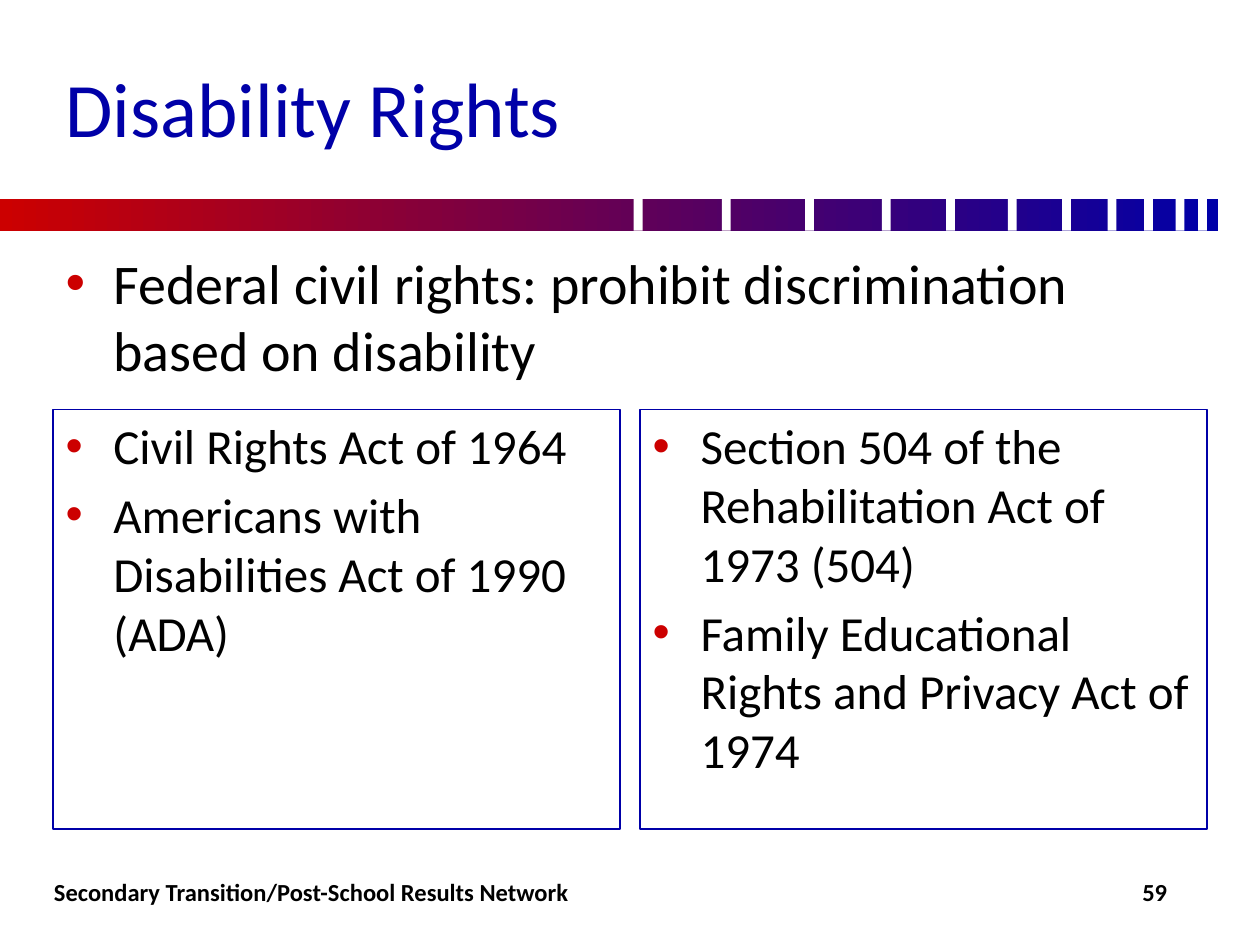
from lxml import etree
from pptx import Presentation
from pptx.dml.color import RGBColor
from pptx.enum.shapes import MSO_SHAPE
from pptx.enum.text import MSO_ANCHOR, MSO_AUTO_SIZE, PP_ALIGN
from pptx.oxml.ns import qn
from pptx.util import Inches, Pt

RED = RGBColor(0xCC, 0x00, 0x00)
BLUE = RGBColor(0x00, 0x00, 0xA8)
BLACK = RGBColor(0x00, 0x00, 0x00)
WHITE = RGBColor(0xFF, 0xFF, 0xFF)
FONT = "Calibri"
RECT = MSO_SHAPE.RECTANGLE
TOP, MIDDLE = MSO_ANCHOR.TOP, MSO_ANCHOR.MIDDLE
LEFT, CENTER = PP_ALIGN.LEFT, PP_ALIGN.CENTER
NO_FIT = MSO_AUTO_SIZE.NONE
COMPARISON_LAYOUT = 4
BAR_TOP, BAR_WIDTH, BAR_HEIGHT = 1.58, 9.67, 0.25
GAP_WIDTH = 0.07
GAP_LEFTS = (5.03, 5.73, 6.39, 7, 7.51, 8, 8.43, 8.79, 9.08, 9.33, 9.51)


def place(s, left, top, width, height):
    s.left, s.top = Inches(left), Inches(top)
    s.width, s.height = Inches(width), Inches(height)


def write(s, lines, size, color=BLACK, bold=False, anchor=TOP, align=LEFT):
    tf = s.text_frame
    tf.text = "\n".join(lines)
    tf.word_wrap = True
    tf.auto_size = NO_FIT
    tf.vertical_anchor = anchor
    for p in tf.paragraphs:
        p.alignment = align
        for r in p.runs:
            r.font.name = FONT
            r.font.size = Pt(size)
            r.font.bold = bold
            r.font.color.rgb = color


def add_bullet(p):
    pPr = p._p.get_or_add_pPr()
    pPr.set("marL", str(Inches(0.38)))
    pPr.set("indent", str(-Inches(0.38)))
    color = etree.SubElement(pPr, qn("a:buClr"))
    etree.SubElement(color, qn("a:srgbClr"), val=str(RED))
    etree.SubElement(pPr, qn("a:buFont"), typeface="Arial")
    etree.SubElement(pPr, qn("a:buChar"), char="•")


def fill_list(s, box, lines, size, outlined=False):
    place(s, *box)
    write(s, lines, size)
    for p in s.text_frame.paragraphs:
        add_bullet(p)
    if outlined:
        s.line.color.rgb = BLUE
        s.line.width = Pt(0.75)


def add_bar_part(slide, left, width):
    sp = slide.shapes.add_shape(RECT, Inches(left), Inches(BAR_TOP),
                                Inches(width), Inches(BAR_HEIGHT))
    sp.shadow.inherit = False
    sp.line.fill.background()
    return sp


def add_divider(slide):
    fill = add_bar_part(slide, 0, BAR_WIDTH).fill
    fill.gradient()
    fill.gradient_angle = 0
    for stop, color in zip(fill.gradient_stops, (RED, BLUE)):
        stop.color.rgb = color
    for left in GAP_LEFTS:
        gap = add_bar_part(slide, left, GAP_WIDTH)
        gap.fill.solid()
        gap.fill.fore_color.rgb = WHITE


def add_footer(slide, text, left, width, align=LEFT):
    s = slide.shapes.add_textbox(Inches(left), Inches(6.83), Inches(width), Inches(0.5))
    write(s, [text], 14, bold=True, anchor=MIDDLE, align=align)


def main():
    prs = Presentation()
    prs.slide_width, prs.slide_height = Inches(10), Inches(7.5)
    slide = prs.slides.add_slide(prs.slide_layouts[COMPARISON_LAYOUT])
    title, intro, left_list, spare, right_list = slide.placeholders
    spare.element.getparent().remove(spare.element)

    add_divider(slide)
    place(title, 0.42, 0.19, 9.17, 1.31)
    write(title, ["Disability Rights"], 44, BLUE, anchor=MIDDLE)
    fill_list(intro, (0.42, 1.92, 9.17, 1.42),
              ["Federal civil rights: prohibit discrimination based on disability"], 32)
    fill_list(left_list, (0.42, 3.25, 4.5, 3.33),
              ["Civil Rights Act of 1964",
               "Americans with Disabilities Act of 1990 (ADA)"], 28, outlined=True)
    fill_list(right_list, (5.08, 3.25, 4.5, 3.33),
              ["Section 504 of the Rehabilitation Act of 1973 (504)",
               "Family Educational Rights and Privacy Act of 1974"], 28, outlined=True)
    add_footer(slide, "59", 8.75, 0.83, CENTER)
    add_footer(slide, "Secondary Transition/Post-School Results Network", 0.33, 4.58)
    prs.save("out.pptx")


if __name__ == "__main__":
    main()
